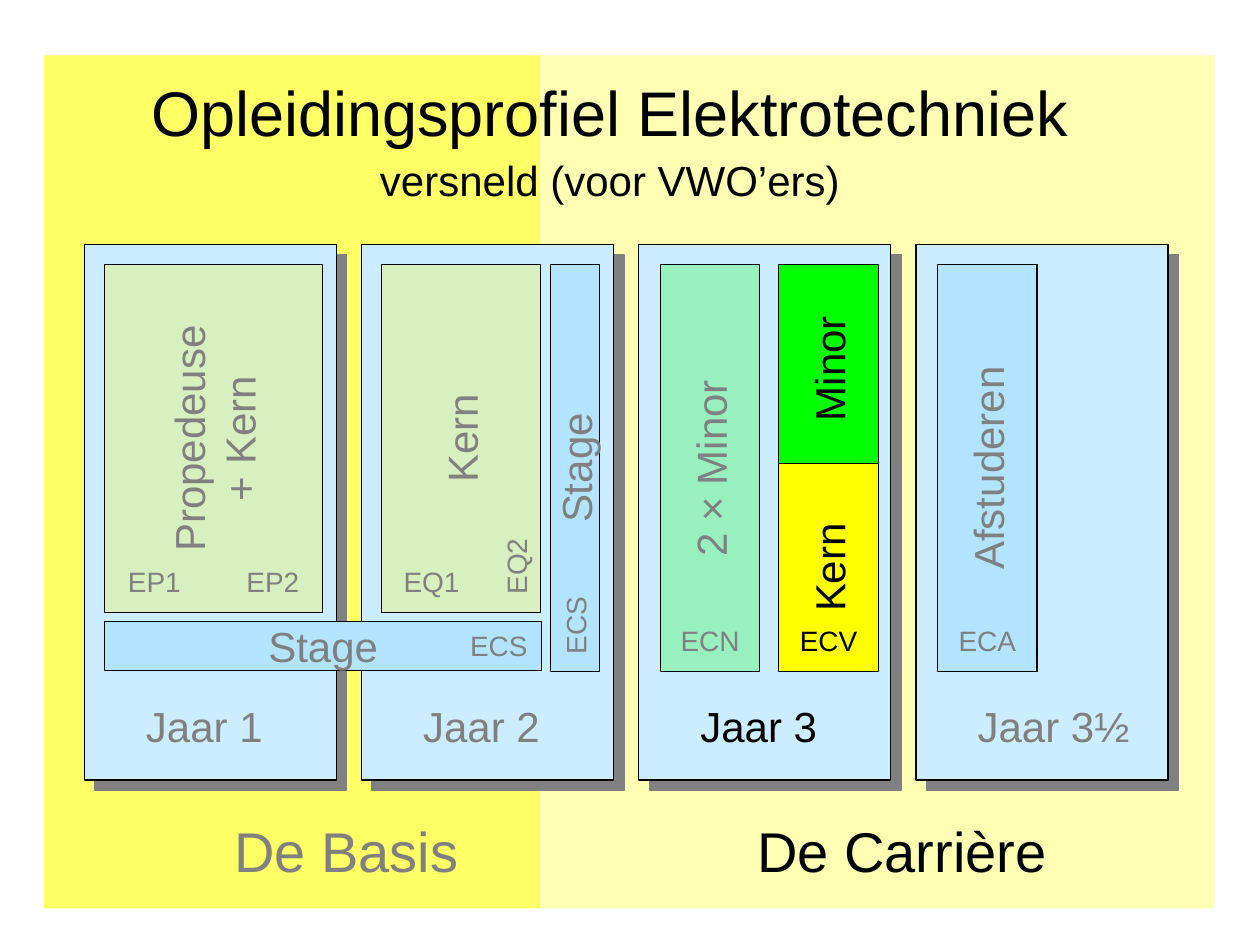
import lxml.etree
import pptx
import pptx.dml.color
import pptx.enum.shapes
import pptx.enum.text
import pptx.oxml.ns
import pptx.util

Inches = pptx.util.Inches
rgb = pptx.dml.color.RGBColor.from_string
qn = pptx.oxml.ns.qn
RECT = pptx.enum.shapes.MSO_SHAPE.RECTANGLE
ANCHOR = pptx.enum.text.MSO_ANCHOR
ALIGN = pptx.enum.text.PP_ALIGN
FIT = pptx.enum.text.MSO_AUTO_SIZE
GREY, BLACK = "808080", "000000"


def write(sp, text, size, color, align=ALIGN.CENTER, **frame):
    tf = sp.text_frame
    tf.text = text
    settings = {"word_wrap": False, "vertical_anchor": ANCHOR.MIDDLE, "auto_size": FIT.NONE}
    for name, value in (settings | frame).items():
        setattr(tf, name, value)
    for p in tf.paragraphs:
        p.alignment = align
        for name, value in {"name": "Arial", "size": pptx.util.Pt(size)}.items():
            setattr(p.font, name, value)
        p.font.color.rgb = rgb(color)


def box(shapes, x, y, w, h, fill=None, alpha=None, line=True, turned=False):
    if turned:
        x, y, w, h = x + (w - h) / 2, y + (h - w) / 2, h, w
    place = [Inches(v) for v in (x, y, w, h)]
    if fill is None:
        sp = shapes.add_textbox(*place)
    else:
        sp = shapes.add_shape(RECT, *place)
        sp.shadow.inherit = False
        sp.fill.solid()
        sp.fill.fore_color.rgb = rgb(fill)
        if alpha:
            clr = sp.fill._xPr.find(qn("a:solidFill"))[0]
            lxml.etree.SubElement(clr, qn("a:alpha"), val=str(alpha * 1000))
        if line:
            sp.line.color.rgb = rgb(BLACK)
            sp.line.width = pptx.util.Pt(0.75)
        else:
            sp.line.fill.background()
    if turned:
        sp.rotation = 270
    return sp


prs = pptx.Presentation()
prs.slide_width, prs.slide_height = Inches(10), Inches(7.5)
s = prs.slides.add_slide(prs.slide_layouts[5])

for x, w, fill in [(4.29, 5.35, "FFFFB4"), (0.35, 3.94, "FFFF66")]:
    box(s.shapes, x, 0.44, w, 6.77, fill, line=False)

years = [("Jaar 1", GREY, 1.13), ("Jaar 2", GREY, 1.13), ("Jaar 3", BLACK, 1.13), ("Jaar 3½", GREY, 1.41)]
for i, (label, color, w) in enumerate(years):
    x = 0.67 + 2.2 * i
    year = s.shapes.add_group_shape()
    sp = box(year.shapes, x, 1.94, 2, 4.25, "CCECFF")
    effects = sp.element.spPr.find(qn("a:effectLst"))
    shadow = lxml.etree.SubElement(effects, qn("a:outerShdw"), dist=str(pptx.util.Pt(8.5)),
                                   dir="2700000", algn="ctr", rotWithShape="0")
    lxml.etree.SubElement(shadow, qn("a:srgbClr"), val=GREY)
    sp = box(year.shapes, x + 0.39, 5.51, w, 0.5)
    write(sp, label, 24, color, ALIGN.LEFT, vertical_anchor=ANCHOR.TOP, auto_size=FIT.SHAPE_TO_FIT_TEXT)

title = s.shapes.title
title.left, title.top, title.width, title.height = [Inches(v) for v in (0.59, 0.6, 8.5, 0.56)]
write(title, "Opleidingsprofiel Elektrotechniek", 36, BLACK, word_wrap=True)
title.element.getparent().append(title.element)
write(box(s.shapes, 0.59, 1.15, 8.5, 0.56), "versneld (voor VWO’ers)", 24, BLACK, word_wrap=True)

for x, text, color in [(1.22, "De Basis", GREY), (5.63, "De Carrière", BLACK)]:
    write(box(s.shapes, x, 6.43, 3.06, 0.63), text, 32, color, word_wrap=True,
          vertical_anchor=ANCHOR.TOP, auto_size=FIT.SHAPE_TO_FIT_TEXT)

blocks = [
    ("Afstuderen", 7.44, 2.1, 0.79, 3.23, "66CCFF", 25, GREY),
    ("Propedeuse\n+ Kern", 0.83, 2.1, 1.73, 2.76, "FFFF00", 25, GREY),
    ("Kern", 3.03, 2.1, 1.26, 2.76, "FFFF00", 25, GREY),
    ("Stage", 4.37, 2.1, 0.39, 3.23, "66CCFF", 25, GREY),
    ("2 × Minor", 5.24, 2.1, 0.79, 3.23, "00FF00", 25, GREY),
    ("Minor", 6.18, 2.1, 0.79, 1.65, "00FF00", None, BLACK),
    ("Kern", 6.18, 3.68, 0.79, 1.65, "FFFF00", None, BLACK),
]
for text, x, y, w, h, fill, alpha, color in blocks:
    write(box(s.shapes, x, y, w, h, fill, alpha, turned=True), text, 24, color)

codes = [
    ("EP1", 0.83, 4.38, GREY), ("EP2", 1.77, 4.38, GREY), ("EQ1", 3.03, 4.38, GREY),
    ("ECN", 5.24, 4.85, GREY), ("ECV", 6.18, 4.85, BLACK), ("ECA", 7.44, 4.85, GREY),
]
for text, x, y, color in codes:
    write(box(s.shapes, x, y, 0.79, 0.47), text, 16, color)
for text, x, y in [("ECS", 4.37, 4.61), ("EQ2", 3.9, 4.14)]:
    write(box(s.shapes, x, y, 0.39, 0.71, turned=True), text, 16, GREY)

stage = s.shapes.add_group_shape()
write(box(stage.shapes, 0.83, 4.93, 3.47, 0.39, "B3E4FF"), "Stage", 24, GREY)
write(box(stage.shapes, 3.58, 4.93, 0.76, 0.39), "ECS", 16, GREY)

prs.save("out.pptx")
